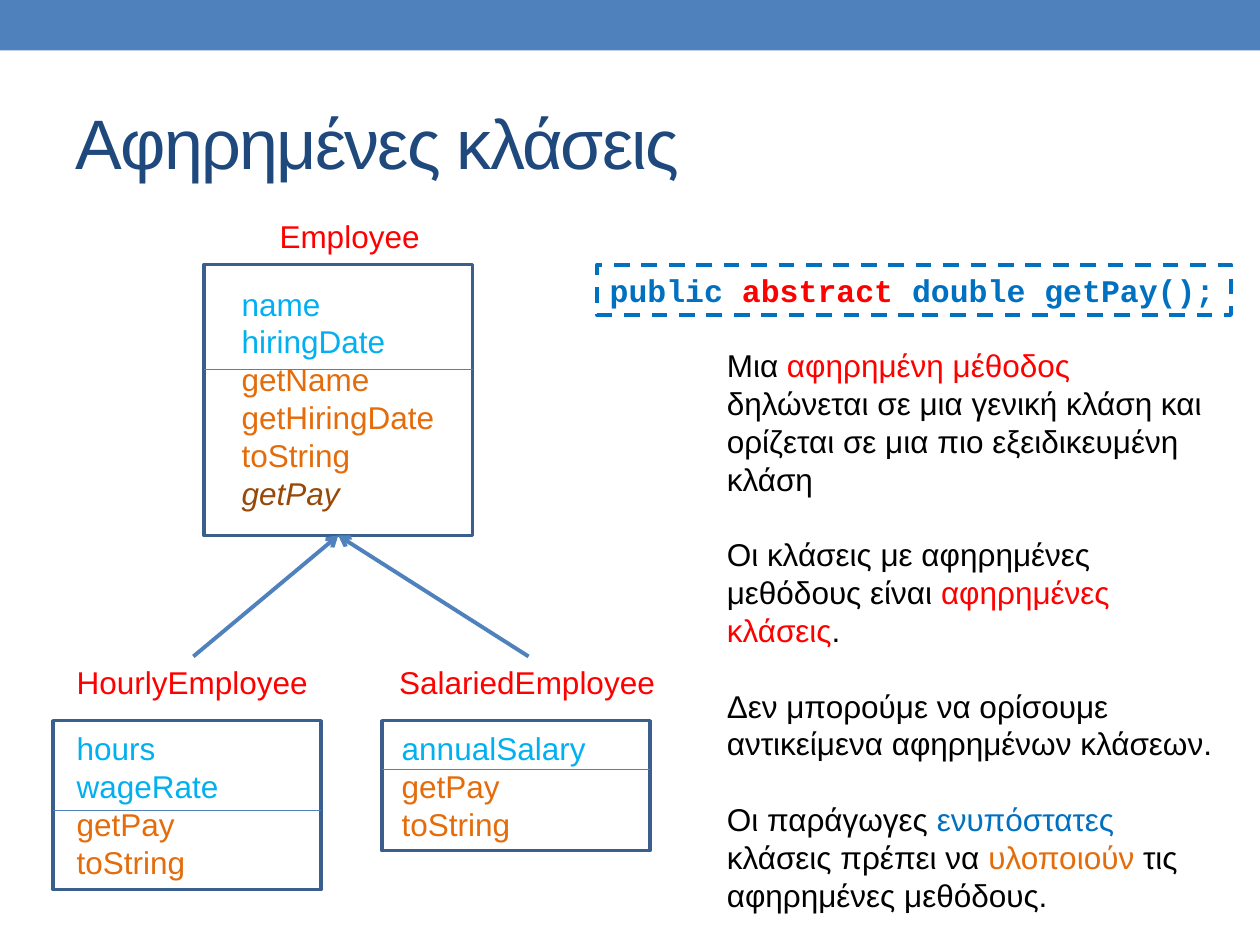
from dataclasses import dataclass
from typing import NamedTuple

import pptx
import pptx.dml.color
import pptx.enum.dml
import pptx.enum.shapes
import pptx.enum.text
import pptx.oxml.ns
import pptx.util
from lxml import etree

Inches = pptx.util.Inches
Pt = pptx.util.Pt
RGBColor = pptx.dml.color.RGBColor
MSO_SHAPE = pptx.enum.shapes.MSO_SHAPE
MSO_AUTO_SIZE = pptx.enum.text.MSO_AUTO_SIZE
qn = pptx.oxml.ns.qn

BLUE = RGBColor(0x4F, 0x81, 0xBD)
OUTLINE = RGBColor(0x3A, 0x5F, 0x8C)
NAVY = RGBColor(0x1F, 0x49, 0x7D)
CYAN = RGBColor(0x00, 0xB0, 0xF0)
ORANGE = RGBColor(0xE4, 0x6C, 0x0A)
BROWN = RGBColor(0x98, 0x48, 0x07)
RED = RGBColor(0xFF, 0x00, 0x00)
KEYWORD_BLUE = RGBColor(0x00, 0x70, 0xC0)
BLACK = RGBColor(0x00, 0x00, 0x00)

LINE_PITCH = 21.6
CLASS_WIDTH = 2.13


class Run(NamedTuple):
    text: str
    color: RGBColor = BLACK
    italic: bool = False


class Box(NamedTuple):
    left: float
    top: float
    width: float
    height: float

    def emu(self):
        return [Inches(v) for v in self]


@dataclass
class ClassDiagram:
    name: str
    label: Box
    frame: Box
    members_box: Box
    divider_y: float
    members: list[Run]


CLASSES = [
    ClassDiagram("Employee", Box(2.12, 1.67, 1.32, 0.4),
                 Box(1.62, 2.1, CLASS_WIDTH, 2.15), Box(1.82, 2.21, 1.74, 1.92), 2.93,
                 [Run("name", CYAN), Run("hiringDate", CYAN), Run("getName", ORANGE),
                  Run("getHiringDate", ORANGE), Run("toString", ORANGE),
                  Run("getPay", BROWN, True)]),
    ClassDiagram("HourlyEmployee", Box(0.51, 5.21, 2.05, 0.4),
                 Box(0.42, 5.72, CLASS_WIDTH, 1.34), Box(0.51, 5.74, 1.34, 1.31), 6.43,
                 [Run("hours", CYAN), Run("wageRate", CYAN),
                  Run("getPay", ORANGE), Run("toString", ORANGE)]),
    ClassDiagram("SalariedEmployee", Box(3.07, 5.21, 2.25, 0.4),
                 Box(3.03, 5.72, CLASS_WIDTH, 1.03), Box(3.09, 5.74, 1.67, 1.01), 6.11,
                 [Run("annualSalary", CYAN), Run("getPay", ORANGE),
                  Run("toString", ORANGE)]),
]

NOTES = [
    [Run("Μια"), Run(" αφηρημένη μέθοδος ", RED),
     Run("δηλώνεται σε μια γενική κλάση και ορίζεται σε μια πιο εξειδικευμένη κλάση")],
    [Run("Οι κλάσεις με αφηρημένες μεθόδους είναι "),
     Run("αφηρημένες κλάσεις", RED), Run(".")],
    [Run("Δεν μπορούμε να ορίσουμε αντικείμενα αφηρημένων κλάσεων.")],
    [Run("Οι παράγωγες "), Run("ενυπόστατες ", KEYWORD_BLUE), Run("κλάσεις πρέπει να "),
     Run("υλοποιούν", ORANGE), Run(" τις αφηρημένες μεθόδους.")],
]

SIGNATURE = [Run("public ", KEYWORD_BLUE), Run("abstract", RED),
             Run(" double getPay();", KEYWORD_BLUE)]


def write(sp, paragraphs: list[list[Run]], *, size: float = 18, font: str = "Arial",
          bold: bool = False, wrap: bool = False, pitch: float | None = LINE_PITCH,
          gap: float = 0, anchor=pptx.enum.text.MSO_ANCHOR.TOP,
          auto_size=MSO_AUTO_SIZE.SHAPE_TO_FIT_TEXT) -> None:
    tf = sp.text_frame
    tf.word_wrap = wrap
    tf.auto_size = auto_size
    tf.vertical_anchor = anchor
    for i, runs in enumerate(paragraphs):
        p = tf.add_paragraph() if i else tf.paragraphs[0]
        p.alignment = pptx.enum.text.PP_ALIGN.LEFT
        if pitch:
            p.line_spacing = Pt(pitch)
        if i and gap:
            p.space_before = Pt(gap)
        for run in runs:
            r = p.add_run()
            r.text = run.text
            r.font.name, r.font.size = font, Pt(size)
            r.font.bold, r.font.italic = bold, run.italic
            r.font.color.rgb = run.color


def add_text(s, box: Box, paragraphs: list[list[Run]], **fmt):
    sp = s.shapes.add_textbox(*box.emu())
    write(sp, paragraphs, **fmt)
    return sp


def add_rect(s, box: Box, *, fill: RGBColor | None = None,
             line: RGBColor | None = None, width: float = 2.08):
    sp = s.shapes.add_shape(MSO_SHAPE.RECTANGLE, *box.emu())
    sp.shadow.inherit = False
    if fill is None:
        sp.fill.background()
    else:
        sp.fill.solid()
        sp.fill.fore_color.rgb = fill
    if line is None:
        sp.line.fill.background()
    else:
        sp.line.color.rgb = line
        sp.line.width = Pt(width)
    return sp


def add_line(s, x1: float, y1: float, x2: float, y2: float, width: float):
    line = s.shapes.add_connector(pptx.enum.shapes.MSO_CONNECTOR.STRAIGHT,
                                  Inches(x1), Inches(y1), Inches(x2), Inches(y2))
    line.line.color.rgb = BLUE
    line.line.width = Pt(width)
    etree.SubElement(line._element.spPr, qn("a:effectLst"))
    return line


def add_inheritance(s, child_label, parent_frame) -> None:
    arrow = add_line(s, 0, 0, 1, 1, 2.25)
    arrow.begin_connect(child_label, 0)
    arrow.end_connect(parent_frame, 2)
    etree.SubElement(arrow.line._get_or_add_ln(), qn("a:tailEnd"), type="arrow")


def add_class(s, c: ClassDiagram):
    frame = add_rect(s, c.frame, line=OUTLINE)
    add_text(s, c.members_box, [[m] for m in c.members])
    add_line(s, c.frame.left, c.divider_y, c.frame.left + c.frame.width, c.divider_y, 0.75)
    label = add_text(s, c.label, [[Run(c.name, RED)]])
    return frame, label


def main() -> None:
    prs = pptx.Presentation()
    prs.slide_width, prs.slide_height = Inches(10), Inches(7.5)
    s = prs.slides.add_slide(prs.slide_layouts[5])

    # Top band and title
    add_rect(s, Box(0, 0, 10, 0.4), fill=BLUE)
    title = s.shapes.title
    title.left, title.top, title.width, title.height = Box(0.5, 0.58, 9, 1.08).emu()
    write(title, [[Run("Αφηρημένες κλάσεις", NAVY)]], size=40, wrap=True, pitch=None,
          anchor=pptx.enum.text.MSO_ANCHOR.MIDDLE, auto_size=MSO_AUTO_SIZE.NONE)
    title.text_frame.paragraphs[0].runs[0].font._element.set("spc", "-100")

    # Class hierarchy
    (parent_frame, _), *children = [add_class(s, c) for c in CLASSES]
    for _, label in children:
        add_inheritance(s, label, parent_frame)

    # Explanation and abstract method signature
    add_text(s, Box(5.67, 2.7, 4.09, 4.64), NOTES, wrap=True, gap=LINE_PITCH)
    signature = add_rect(s, Box(4.74, 2.1, 5.03, 0.4), line=KEYWORD_BLUE, width=2.25)
    signature.line.dash_style = pptx.enum.dml.MSO_LINE.DASH
    write(signature, [SIGNATURE], font="Courier New", bold=True)

    prs.save("out.pptx")


if __name__ == "__main__":
    main()
